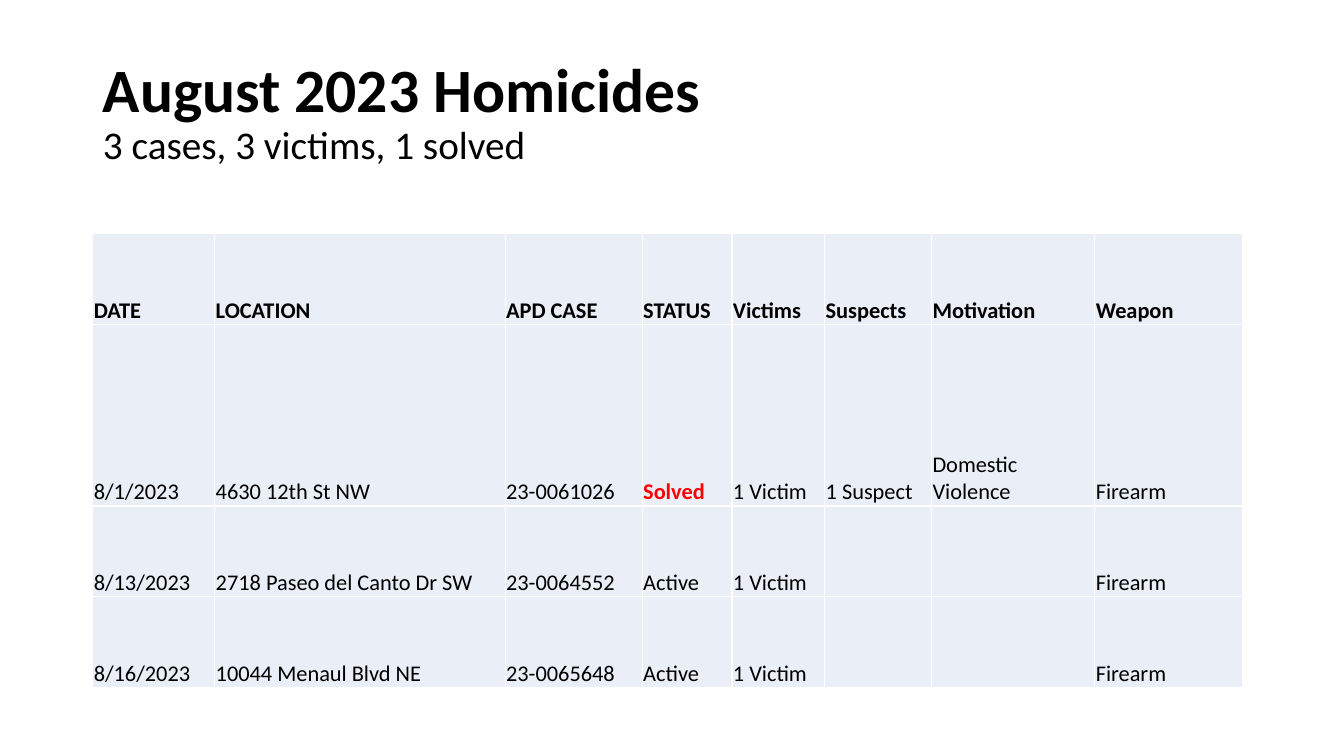
import pptx
import pptx.dml.color
import pptx.enum.text
import pptx.oxml
import pptx.oxml.ns
import pptx.util

Inches = pptx.util.Inches
LEFT = 0.92
COLUMN_WIDTHS = [1.21, 2.88, 1.36, 0.89, 0.92, 1.06, 1.62, 1.47]
ROW_HEIGHTS = [0.9, 1.8, 0.9, 0.9]
CASES = [
    ["DATE", "LOCATION", "APD CASE", "STATUS", "Victims", "Suspects", "Motivation", "Weapon"],
    ["8/1/2023", "4630 12th St NW", "23-0061026", "Solved", "1 Victim", "1 Suspect",
     "Domestic Violence", "Firearm"],
    ["8/13/2023", "2718 Paseo del Canto Dr SW", "23-0064552", "Active", "1 Victim", "", "", "Firearm"],
    ["8/16/2023", "10044 Menaul Blvd NE", "23-0065648", "Active", "1 Victim", "", "", "Firearm"],
]


def color(hex_string):
    return pptx.dml.color.RGBColor.from_string(hex_string)


def add_run(paragraph, text, size, bold=False, hex_string="000000"):
    run = paragraph.add_run()
    run.text = text
    run.font.name = "Calibri"
    run.font.size = pptx.util.Pt(size)
    run.font.bold = bold
    run.font.color.rgb = color(hex_string)


presentation = pptx.Presentation()
presentation.slide_width = Inches(13.33)
presentation.slide_height = Inches(7.5)
slide = presentation.slides.add_slide(presentation.slide_layouts[5])

# Title
title = slide.shapes.title
title.left, title.top = Inches(LEFT), Inches(0.4)
title.width, title.height = Inches(11.5), Inches(1.45)
title.text_frame.vertical_anchor = pptx.enum.text.MSO_ANCHOR.MIDDLE
heading = title.text_frame.paragraphs[0]
heading.alignment = pptx.enum.text.PP_ALIGN.LEFT
heading.line_spacing = 0.9
add_run(heading, "August 2023 Homicides", 44, bold=True)
heading.add_line_break()
add_run(heading, "3 cases, 3 victims, 1 solved", 28)

# Case table
table = slide.shapes.add_table(
    len(ROW_HEIGHTS), len(COLUMN_WIDTHS), Inches(LEFT), Inches(2.32),
    Inches(sum(COLUMN_WIDTHS)), Inches(sum(ROW_HEIGHTS))).table
table.first_row = False
table.horz_banding = False
for column, width in zip(table.columns, COLUMN_WIDTHS):
    column.width = Inches(width)
for row, height in zip(table.rows, ROW_HEIGHTS):
    row.height = Inches(height)

for row_index, case in enumerate(CASES):
    for column_index, text in enumerate(case):
        cell = table.cell(row_index, column_index)
        cell.vertical_anchor = pptx.enum.text.MSO_ANCHOR.BOTTOM
        cell.margin_left = cell.margin_top = cell.margin_right = Inches(0.01)
        cell.margin_bottom = 0
        properties = cell._tc.get_or_add_tcPr()
        for side in ("lnL", "lnR", "lnT", "lnB"):
            properties.append(pptx.oxml.parse_xml(
                f'<a:{side} {pptx.oxml.ns.nsdecls("a")} w="12700"><a:solidFill>'
                f'<a:srgbClr val="FFFFFF"/></a:solidFill></a:{side}>'))
        cell.fill.solid()
        cell.fill.fore_color.rgb = color("EAEFF7")
        if text:
            solved = text == "Solved"
            add_run(cell.text_frame.paragraphs[0], text, 16, bold=row_index == 0 or solved,
                    hex_string="FF0000" if solved else "000000")

presentation.save("out.pptx")
